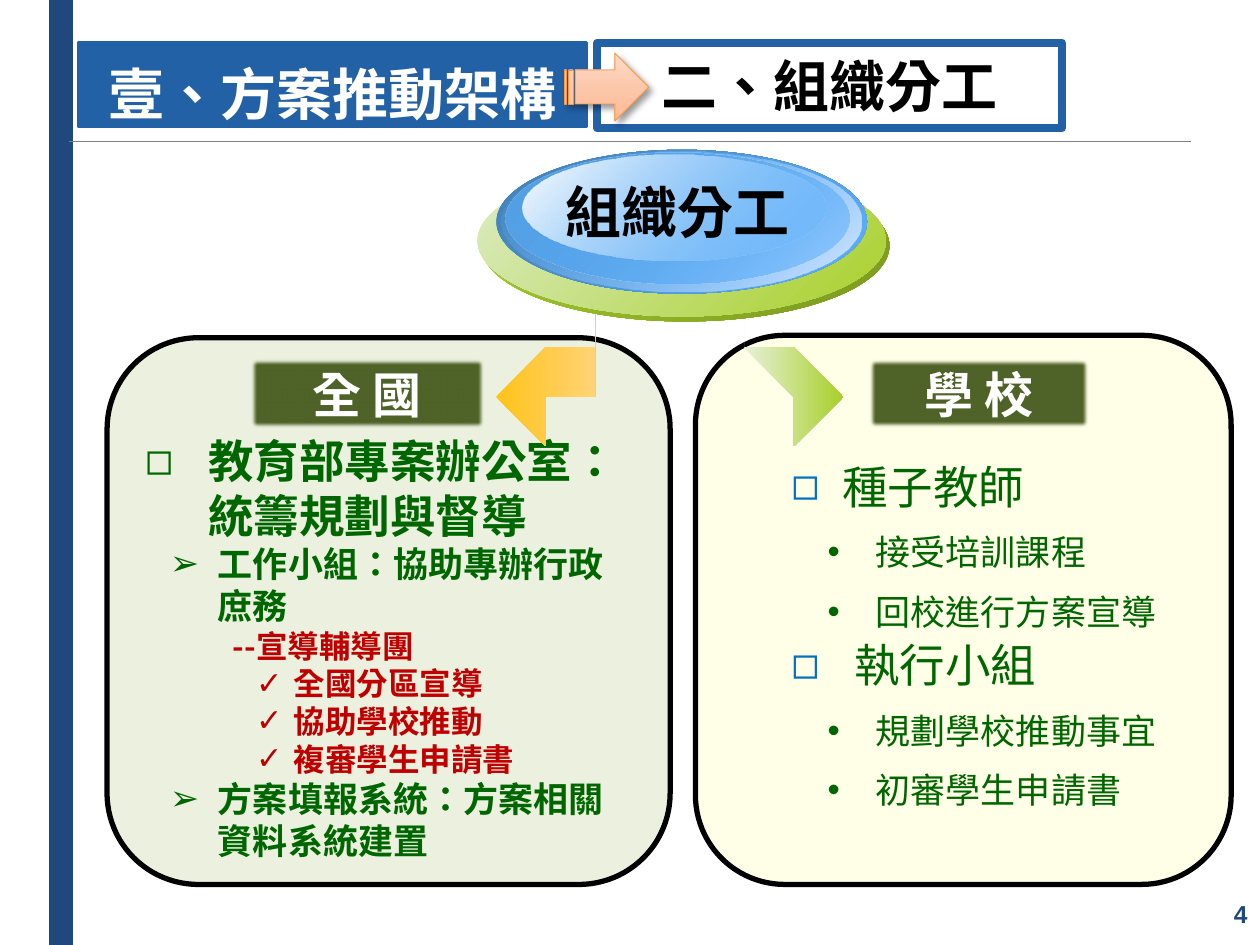
"""Build the slide on how the work is divided between nation and school."""
from dataclasses import dataclass

from lxml import etree
from pptx import Presentation
from pptx import util as u
from pptx.dml.color import RGBColor
from pptx.enum import lang, shapes, text
from pptx.oxml.ns import qn


@dataclass(frozen=True)
class Theme:
    """Fonts, colours and type sizes of the slide."""
    cjk: str = "Noto Sans CJK SC"
    latin: str = "Arial"
    navy: str = "1F497D"
    blue: str = "2261A6"
    sky: str = "5CB1FE"
    box: str = "0070C0"
    grey: str = "808080"
    white: str = "FFFFFF"
    black: str = "000000"
    green: str = "006600"
    red: str = "C00000"
    olive: str = "4F6228"
    lime: str = "A8D02A"
    mint: str = "EBF1DE"
    cream: str = "FFFFE7"
    orange: str = "F79646"
    head: int = 32
    label: int = 28
    item: int = 26
    sub: int = 20
    small: int = 18
    page: int = 14


T = Theme()
AUTO = shapes.MSO_SHAPE
ALIGN = text.PP_ALIGN

# style: level, left margin, hanging indent (cm), size, colour, bullet, bullet colour
STYLES = {
    "office": (0, 1.27, 1.27, T.item, T.green, "◻", T.green),
    "group": (1, 1.47, 0.97, T.sub, T.green, "➢", T.green),
    "team": (3, 2.74, 0.97, T.small, T.red, None, None),
    "check": (4, 3.0, 0.76, T.small, T.red, "✓", T.red),
    "seed": (1, 1.78, 1.02, T.item, T.green, "◻", T.box),
    "crew": (1, 2.03, 1.27, T.item, T.green, "◻", T.box),
    "task": (2, 2.46, 0.97, T.sub, T.green, "•", T.green),
}
NATION = [
    ("office", "教育部專案辦公室：統籌規劃與督導"),
    ("group", "工作小組：協助專辦行政庶務"),
    ("team", "--宣導輔導團"),
    ("check", "全國分區宣導"),
    ("check", "協助學校推動"),
    ("check", "複審學生申請書"),
    ("group", "方案填報系統：方案相關資料系統建置"),
]
SCHOOL = [
    ("seed", "種子教師"),
    ("task", "接受培訓課程"),
    ("task", "回校進行方案宣導"),
    ("crew", "執行小組"),
    ("task", "規劃學校推動事宜"),
    ("task", "初審學生申請書"),
]
OVALS = [
    ((9.7, 3.43, 8.23, 3.05), [(0, T.lime), (100, "7B981F")]),
    ((9.63, 3.33, 8.23, 3.05), [(0, "DEECC7"), (100, T.lime)]),
    ((10.01, 3.02, 7.47, 2.9), [(0, "427FB6"), (100, T.sky)]),
    ((10.11, 3.05, 7.26, 2.82), [(0, T.sky, 0), (100, "D8E8FF")]),
    ((10.19, 3.07, 6.93, 2.64), [(0, "53A0E6"), (100, T.sky, 48)]),
    ((10.54, 3.12, 6.1, 2.13), [(0, T.white), (100, T.sky, 38)]),
]
CURVE = [
    (12.52, 5.77), (12.5, 6.07), (12.47, 6.38), (12.4, 6.65), (12.29, 6.91),
    (12.17, 7.14), (12.01, 7.37), (11.81, 7.57), (11.58, 7.75), (11.28, 7.92),
    (10.97, 8.08), (10.97, 8.59), (10.21, 7.57), (10.97, 6.58), (10.97, 7.09),
    (11.1, 7.06), (11.25, 7.01), (11.43, 6.96), (11.58, 6.86), (11.76, 6.76),
    (11.94, 6.63), (12.09, 6.5), (12.22, 6.35), (12.34, 6.2), (12.42, 6.05),
    (12.5, 5.92),
]
MIRROR = 27.33


def add(parent, tag, **attrs):
    """Append a drawing element with the given attributes."""
    node = etree.SubElement(parent, qn("a:" + tag))
    for key, value in attrs.items():
        node.set(key, str(value))
    return node


def place(shape, at):
    """Move and size a shape in centimetres."""
    shape.left, shape.top, shape.width, shape.height = map(u.Cm, at)


def paint(shape, fill, line=None, width=1.0):
    """Give a shape a plain fill and an optional outline."""
    if fill:
        shape.fill.solid()
        shape.fill.fore_color.rgb = RGBColor.from_string(fill)
    if line:
        shape.line.color.rgb = RGBColor.from_string(line)
        shape.line.width = u.Pt(width)
    else:
        shape.line.fill.background()
    return shape


def blend(shape, stops, angle):
    """Fill a shape with a linear gradient whose stops may be see-through."""
    shape.fill.gradient()
    grad = shape.element.spPr.find(qn("a:gradFill"))
    grad.find(qn("a:lin")).set("ang", str(angle * 60000))
    row = grad.find(qn("a:gsLst"))
    for old in list(row):
        row.remove(old)
    for pos, color, *alpha in stops:
        tint = add(add(row, "gs", pos=pos * 1000), "srgbClr", val=color)
        for value in alpha:
            add(tint, "alpha", val=value * 1000)


def form(slide, kind, at, fill=None, line=None, width=1.0):
    """Add a preset shape without a shadow."""
    shape = slide.shapes.add_shape(kind, *map(u.Cm, at))
    shape.shadow.inherit = False
    return paint(shape, fill, line, width)


def style(para, size, color, bold=True, face=T.cjk):
    """Format the runs of a paragraph."""
    for run in para.runs:
        font = run.font
        font.size, font.bold, font.name = u.Pt(size), bold, face
        font.color.rgb = RGBColor.from_string(color)
        font.language_id = lang.MSO_LANGUAGE_ID.TRADITIONAL_CHINESE
        add(run.font._element, "ea", typeface=face)


def write(shape, words, size, color, align=ALIGN.CENTER, wrap=False, face=T.cjk):
    """Set one line of bold text in the middle of a shape."""
    frame = shape.text_frame
    frame.text, frame.word_wrap = words, wrap
    frame.auto_size = text.MSO_AUTO_SIZE.NONE
    frame.vertical_anchor = text.MSO_ANCHOR.MIDDLE
    para = frame.paragraphs[0]
    para.alignment = align
    style(para, size, color, face=face)
    return para


def outline(slide, holder, at, items, bold, pitch=None):
    """Fill a body placeholder with a bulleted list on top of its panel."""
    slide.shapes.element.append(holder.element)
    place(holder, at)
    frame = holder.text_frame
    frame.text = "\n".join(words for _, words in items)
    frame.auto_size = text.MSO_AUTO_SIZE.NONE
    for para, (name, _) in zip(frame.paragraphs, items):
        level, left, hang, size, color, mark, tint = STYLES[name]
        para.level, para.space_before = level, u.Pt(0)
        para.line_spacing = pitch
        props = para._p.get_or_add_pPr()
        props.set("marL", str(u.Cm(left)))
        props.set("indent", str(-u.Cm(hang)))
        if mark:
            add(add(props, "buClr"), "srgbClr", val=tint)
            add(props, "buFont", typeface=T.latin)
            add(props, "buChar", char=mark)
        else:
            add(props, "buNone")
        style(para, size, color, bold)


def label(slide, at, words):
    """Add a soft-edged panel heading."""
    shape = form(slide, AUTO.RECTANGLE, at, T.olive)
    add(shape.element.spPr.find(qn("a:effectLst")), "softEdge", rad=u.Pt(2.5))
    write(shape, words, T.label, T.white)


def curve(slide, points, stops):
    """Add a curved arrow from its corner points."""
    pen = slide.shapes.build_freeform(*points[0], scale=u.Cm(1))
    pen.add_line_segments(points[1:], close=True)
    shape = paint(pen.convert_to_shape(), None)
    shape.shadow.inherit = False
    blend(shape, stops, 0)


def header(slide):
    """Add the side bar, the rule, the two headings and the arrow between them."""
    form(slide, AUTO.RECTANGLE, (0.99, 0, 0.48, 19.05), T.navy)
    rule = slide.shapes.add_connector(
        shapes.MSO_CONNECTOR.STRAIGHT, *map(u.Cm, (1.4, 2.84, 24, 2.84)))
    rule.line.color.rgb = RGBColor.from_string(T.grey)
    rule.line.width = u.Pt(0.25)
    add(rule.element.spPr, "effectLst")
    part = form(slide, AUTO.RECTANGLE, (12.04, 0.86, 9.37, 1.73), T.white, T.blue, 4.5)
    write(part, "二、組織分工", T.head, T.black)
    title = slide.shapes.title
    slide.shapes.element.append(title.element)
    place(title, (1.57, 0.86, 10.26, 1.7))
    paint(title, T.blue, T.blue, 1.5)
    write(title, "壹、方案推動架構", T.head, T.white).line_spacing = 1.25
    arrow = form(slide, AUTO.STRIPED_RIGHT_ARROW, (11.38, 1.07, 1.7, 1.37), None, T.orange, 0.5)
    blend(arrow, [(0, "FDDBCA"), (50, "FBC7AB"), (100, "FEBB95")], 90)
    cast = add(arrow.element.spPr.find(qn("a:effectLst")), "outerShdw",
               blurRad=u.Pt(4), dist=u.Pt(3), dir=45 * 60000)
    add(add(cast, "srgbClr", val=T.black), "alpha", val=40000)


def main():
    """Build and save the slide."""
    deck = Presentation()
    deck.slide_width, deck.slide_height = u.Cm(25.4), u.Cm(19.05)
    slide = deck.slides.add_slide(deck.slide_layouts[3])
    _, left, right = list(slide.placeholders)
    header(slide)
    form(slide, AUTO.ROUNDED_RECTANGLE, (2.16, 6.81, 11.35, 11.02), T.mint, T.black, 3)
    outline(slide, left, (2.67, 8.61, 10.39, 9.58), NATION, True)
    curve(slide, CURVE, [(0, "FFC319"), (100, "FFDBA5")])
    form(slide, AUTO.ROUNDED_RECTANGLE, (14.02, 6.76, 10.8, 11.07), T.cream, T.black, 3)
    outline(slide, right, (14.94, 9.02, 9.63, 7.39), SCHOOL, False, u.Pt(34))
    curve(slide, [(MIRROR - x, y) for x, y in CURVE], [(0, "E8F1D9"), (100, T.lime)])
    for at, stops in OVALS:
        blend(form(slide, AUTO.OVAL, at), stops, 45)
    topic = slide.shapes.add_textbox(*map(u.Cm, (11.13, 3.45, 5.08, 1.63)))
    write(topic, "組織分工", T.head, T.black)
    label(slide, (5.03, 7.21, 4.75, 1.45), "全 國")
    label(slide, (17.48, 7.21, 4.5, 1.45), "學 校")
    page = slide.shapes.add_textbox(*map(u.Cm, (22.07, 17.86, 3.33, 1.12)))
    write(page, "4", T.page, T.navy, ALIGN.RIGHT, True, T.latin)
    deck.save("out.pptx")


if __name__ == "__main__":
    main()
